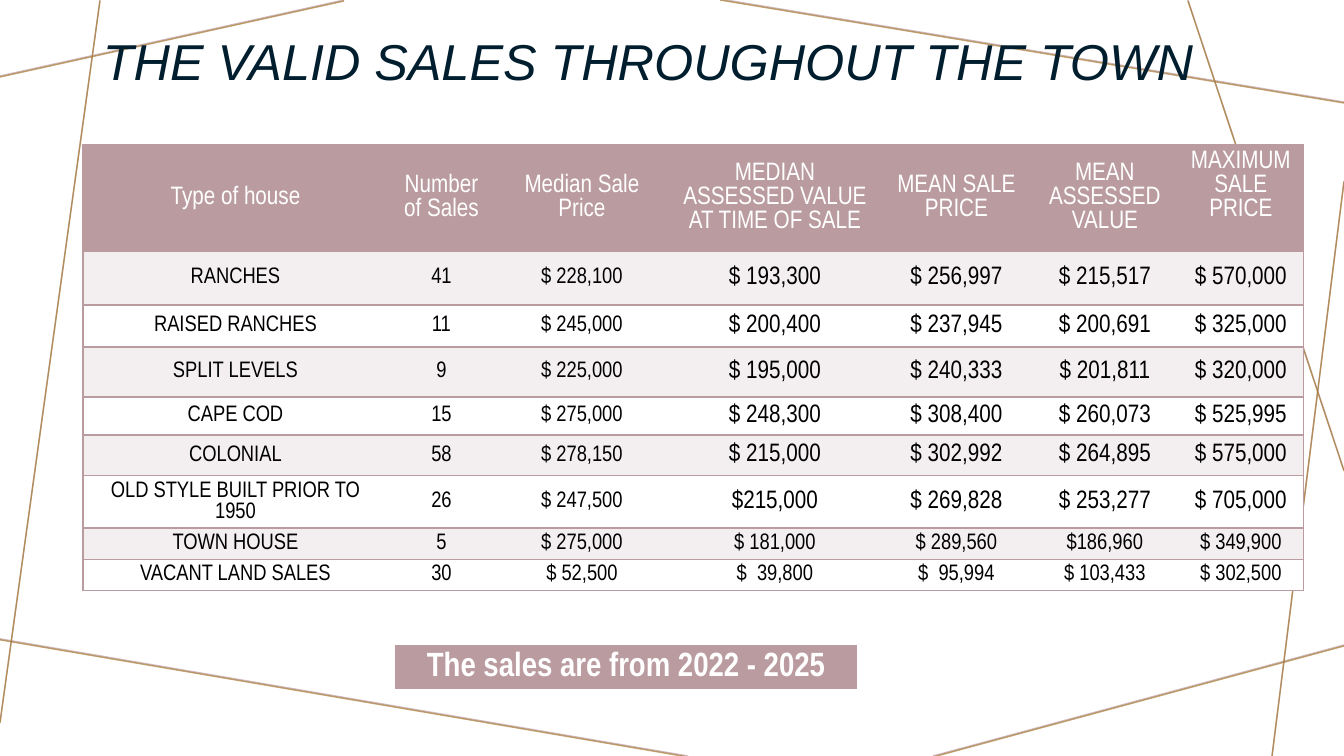
from lxml import etree
from pptx import Presentation
from pptx.dml.color import RGBColor
from pptx.enum import shapes, text
from pptx.oxml.ns import qn
from pptx.util import Pt

SCALE = 12192000 / 1344
COLORS = {
    "rose": "BA9CA0",
    "bronze": "A57931",
    "navy": "001E2E",
    "pale": "F3EFF0",
    "white": "FFFFFF",
    "black": "000000",
}
PLAIN_TABLE_STYLE = "{2D5ABB26-0587-4C30-8999-92F81FD0307C}"
LINE_PITCH = {16: 15, 18: 17, 24: 23}
BACKGROUND_LINES = [
    (344, 0, 0, 76),
    (100, 0, 0, 722),
    (688, 756, -5, 638),
    (1344, 645, 933, 756),
    (1344, 181, 1272, 756),
    (1344, 470, 1188, 0),
    (1344, 102, 720, -1),
]
COLUMN_WIDTHS = [305, 107, 174, 212, 151, 146, 126]
ROW_HEIGHTS = [106, 54, 42, 50, 38, 41, 52, 31, 31]
SALES = [
    ["Type of house", "Number of Sales", "Median Sale Price",
     "MEDIAN ASSESSED VALUE AT TIME OF SALE", "MEAN SALE PRICE",
     "MEAN ASSESSED VALUE", "MAXIMUM SALE PRICE"],
    ["RANCHES", "41", "$ 228,100", "$ 193,300", "$ 256,997", "$ 215,517", "$ 570,000"],
    ["RAISED RANCHES", "11", "$ 245,000", "$ 200,400", "$ 237,945", "$ 200,691", "$ 325,000"],
    ["SPLIT LEVELS", "9", "$ 225,000", "$ 195,000", "$ 240,333", "$ 201,811", "$ 320,000"],
    ["CAPE COD", "15", "$ 275,000", "$ 248,300", "$ 308,400", "$ 260,073", "$ 525,995"],
    ["COLONIAL", "58", "$ 278,150", "$ 215,000", "$ 302,992", "$ 264,895", "$ 575,000"],
    ["OLD STYLE BUILT PRIOR TO 1950", "26", "$ 247,500", "$215,000", "$ 269,828",
     "$ 253,277", "$ 705,000"],
    ["TOWN HOUSE", "5", "$ 275,000", "$ 181,000", "$ 289,560", "$186,960", "$ 349,900"],
    ["VACANT LAND SALES", "30", "$ 52,500", "$  39,800", "$  95,994", "$ 103,433", "$ 302,500"],
]


def px(length):
    return round(length * SCALE)


def rgb(name):
    return RGBColor.from_string(COLORS[name])


def write(paragraph, words, color, **font_format):
    span = paragraph.add_run()
    span.text = words
    span.font.color.rgb = rgb(color)
    for name, value in font_format.items():
        setattr(span.font, name, value)


def add_line(page, ends, color):
    line = page.shapes.add_connector(
        shapes.MSO_CONNECTOR.STRAIGHT, *[px(end) for end in ends])
    line.line.width = Pt(1)
    line.line.color.rgb = rgb(color)
    properties = line._element.spPr
    shade = properties.find(".//" + qn("a:srgbClr"))
    etree.SubElement(shade, qn("a:alpha"), val="70000")
    etree.SubElement(properties, qn("a:effectLst"))


def add_title(page, words):
    box = page.shapes.add_textbox(px(93), px(39), px(1139), px(57))
    frame = box.text_frame
    frame.word_wrap = True
    frame.vertical_anchor = text.MSO_ANCHOR.BOTTOM
    paragraph = frame.paragraphs[0]
    paragraph.line_spacing = 0.9
    write(paragraph, words, "navy", size=Pt(36), name="Arial", italic=True)


def add_plain_table(page, left, top, widths, heights):
    frame = page.shapes.add_table(len(heights), len(widths), px(left), px(top),
                                  px(sum(widths)), px(sum(heights)))
    table = frame.table
    table._tbl.tblPr.find(qn("a:tableStyleId")).text = PLAIN_TABLE_STYLE
    for column, width in zip(table.columns, widths):
        column.width = px(width)
    for row, height in zip(table.rows, heights):
        row.height = px(height)
    return table


def fill_cell(cell, words, fill, color, sides, anchor, size, bold=False):
    properties = cell._tc.get_or_add_tcPr()
    for side in sides:
        border = etree.SubElement(properties, qn("a:ln" + side), w=str(Pt(1)))
        solid = etree.SubElement(border, qn("a:solidFill"))
        etree.SubElement(solid, qn("a:srgbClr"), val=COLORS["rose"])
    cell.fill.solid()
    cell.fill.fore_color.rgb = rgb(fill)
    cell.vertical_anchor = anchor
    paragraph = cell.text_frame.paragraphs[0]
    paragraph.alignment = text.PP_ALIGN.CENTER
    paragraph.line_spacing = Pt(LINE_PITCH[size])
    write(paragraph, words, color, name="Arial Narrow", size=Pt(size), bold=bold)


def add_sales_table(page):
    table = add_plain_table(page, 83, 145, COLUMN_WIDTHS, ROW_HEIGHTS)
    last = len(COLUMN_WIDTHS) - 1
    for r, values in enumerate(SALES):
        fill = "rose" if r == 0 else "pale" if r % 2 else "white"
        color = "white" if r == 0 else "black"
        for c, value in enumerate(values):
            large = r == 0 or (r < 7 and c > 2)
            sides = ("L" if c == 0 else "") + ("R" if c == last else "") + "TB"
            fill_cell(table.cell(r, c), value, fill, color, sides,
                      text.MSO_ANCHOR.MIDDLE, 18 if large else 16)
    table.cell(0, last).margin_bottom = px(29)


def add_period_note(page):
    table = add_plain_table(page, 396, 646, [460], [42])
    fill_cell(table.cell(0, 0), "The sales are from 2022 - 2025", "rose", "white",
              "LRTB", text.MSO_ANCHOR.TOP, 24, bold=True)


def main():
    deck = Presentation()
    deck.slide_width, deck.slide_height = px(1344), px(756)
    page = deck.slides.add_slide(deck.slide_layouts[6])
    for color, shift in (("rose", 0), ("bronze", 1)):
        for x1, y1, x2, y2 in BACKGROUND_LINES:
            add_line(page, (x1, y1 + shift, x2, y2 + shift), color)
    add_title(page, "THE VALID SALES THROUGHOUT THE TOWN")
    add_sales_table(page)
    add_period_note(page)
    deck.save("out.pptx")


if __name__ == "__main__":
    main()
